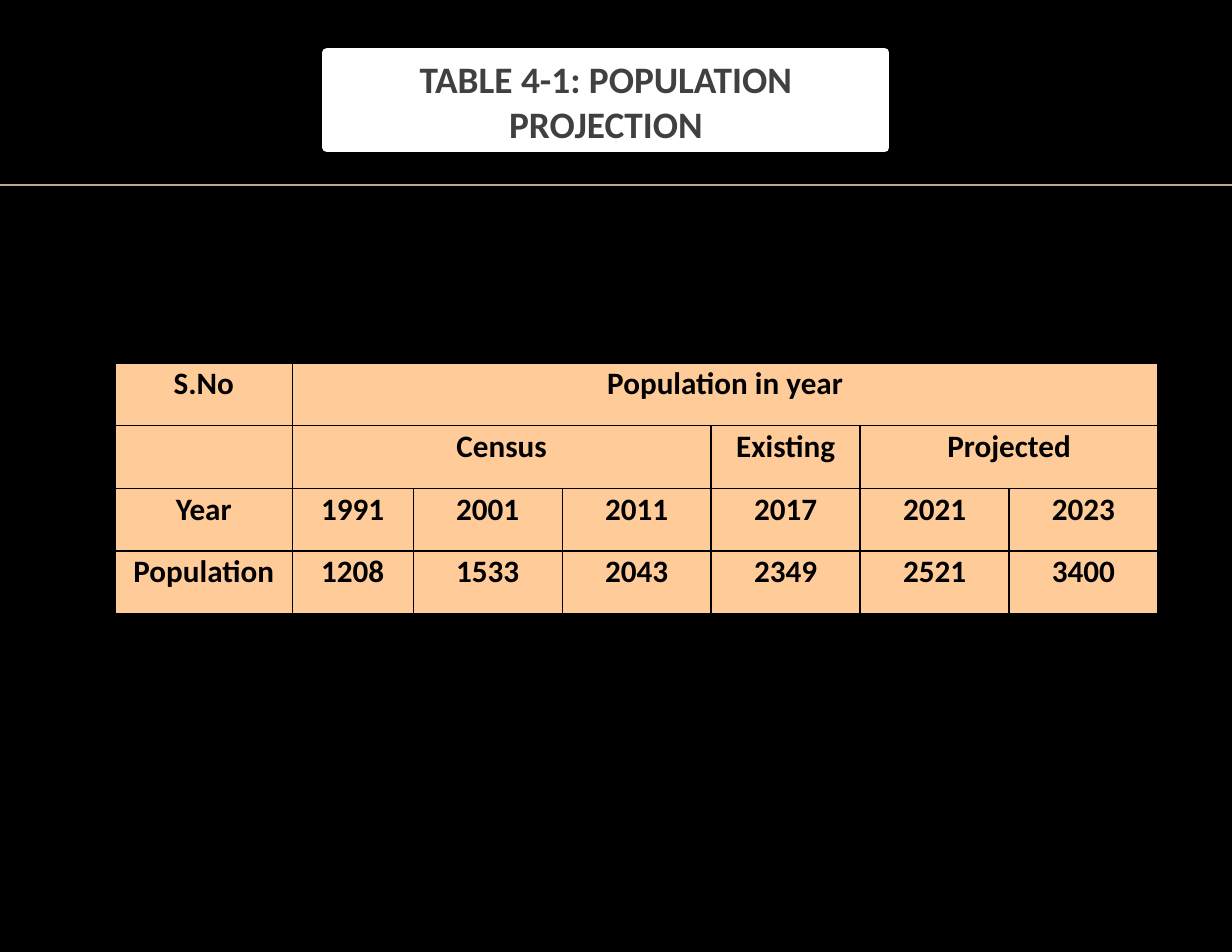
from lxml.etree import SubElement
from pptx import Presentation
from pptx.dml.color import RGBColor
from pptx.enum.text import MSO_ANCHOR, PP_ALIGN
from pptx.oxml.ns import qn
from pptx.util import Inches, Pt

# Content: each cell is (text runs, columns spanned)
TITLE = ["TABLE ", "4-1: POPULATION PROJECTION"]
ROWS = [
    [(["S.No"], 1), (["Population in ", "year"], 6)],
    [([], 1), (["Census"], 3), (["Existing"], 1), (["Projected"], 2)],
    [([text], 1) for text in ("Year", "1991", "2001", "2011", "2017", "2021", "2023")],
    [([text], 1) for text in ("Population", "1208", "1533", "2043", "2349", "2521", "3400")],
]

THEME = {
    "font": "Calibri", "title": 24, "cell": 20,
    "back": "000000", "panel": "FFFFFF", "head": "404040",
    "ink": "000000", "fill": "FFCC99", "rule": "BBAA8A",
}

# Grid
WIDE, HIGH = 11, 8.5
COLS = [1.58, 1.08] + [1.33] * 5
ROW = 0.56
LEFT, TOP = 1.03, 3.24
RULE = 1.65


def tint(name):
    return RGBColor.from_string(THEME[name])


def write(frame, runs, size, color):
    para = frame.paragraphs[0]
    para.alignment = PP_ALIGN.CENTER
    for text in runs:
        run = para.add_run()
        run.text = text
        font = run.font
        font.name, font.size, font.bold = THEME["font"], Pt(THEME[size]), True
        font.color.rgb = tint(color)


def inset(part, top):
    part.margin_left = part.margin_right = part.margin_bottom = 0
    part.margin_top = Inches(top)


def edge(cell):
    props = cell._tc.get_or_add_tcPr()
    for side in ("lnL", "lnR", "lnT", "lnB"):
        line = SubElement(props, qn(f"a:{side}"), w=str(Pt(1)))
        fill = SubElement(line, qn("a:solidFill"))
        SubElement(fill, qn("a:srgbClr"), val=THEME["ink"])


def main():
    deck = Presentation()
    deck.slide_width, deck.slide_height = Inches(WIDE), Inches(HIGH)
    slide = deck.slides.add_slide(deck.slide_layouts[6])
    slide.background.fill.solid()
    slide.background.fill.fore_color.rgb = tint("back")

    # Rule under the heading
    rule = slide.shapes.add_connector(1, 0, Inches(RULE), Inches(WIDE), Inches(RULE))
    rule.line.color.rgb = tint("rule")
    rule.line.width = Pt(1)
    SubElement(rule._element.spPr, qn("a:effectLst"))

    # Title panel
    box = slide.shapes.add_textbox(Inches(2.92), Inches(0.47), Inches(4.98), Inches(0.85))
    box.fill.solid()
    box.fill.fore_color.rgb = tint("panel")
    box.line.color.rgb = tint("panel")
    box.line.width = Pt(6)
    frame = box.text_frame
    frame.word_wrap = True
    frame.vertical_anchor = MSO_ANCHOR.MIDDLE
    inset(frame, 0.01)
    write(frame, TITLE, "title", "head")

    # Population table
    table = slide.shapes.add_table(
        len(ROWS), len(COLS), Inches(LEFT), Inches(TOP),
        Inches(sum(COLS)), Inches(ROW * len(ROWS))).table
    table.first_row = table.horz_banding = False
    for col, width in zip(table.columns, COLS):
        col.width = Inches(width)
    for y, row in enumerate(ROWS):
        table.rows[y].height = Inches(ROW)
        x = 0
        for runs, span in row:
            cell = table.cell(y, x)
            if span > 1:
                cell.merge(table.cell(y, x + span - 1))
            inset(cell, 0.02)
            write(cell.text_frame, runs, "cell", "ink")
            x += span
        for cell in table.rows[y].cells:
            edge(cell)
            cell.fill.solid()
            cell.fill.fore_color.rgb = tint("fill")

    deck.save("out.pptx")


if __name__ == "__main__":
    main()
